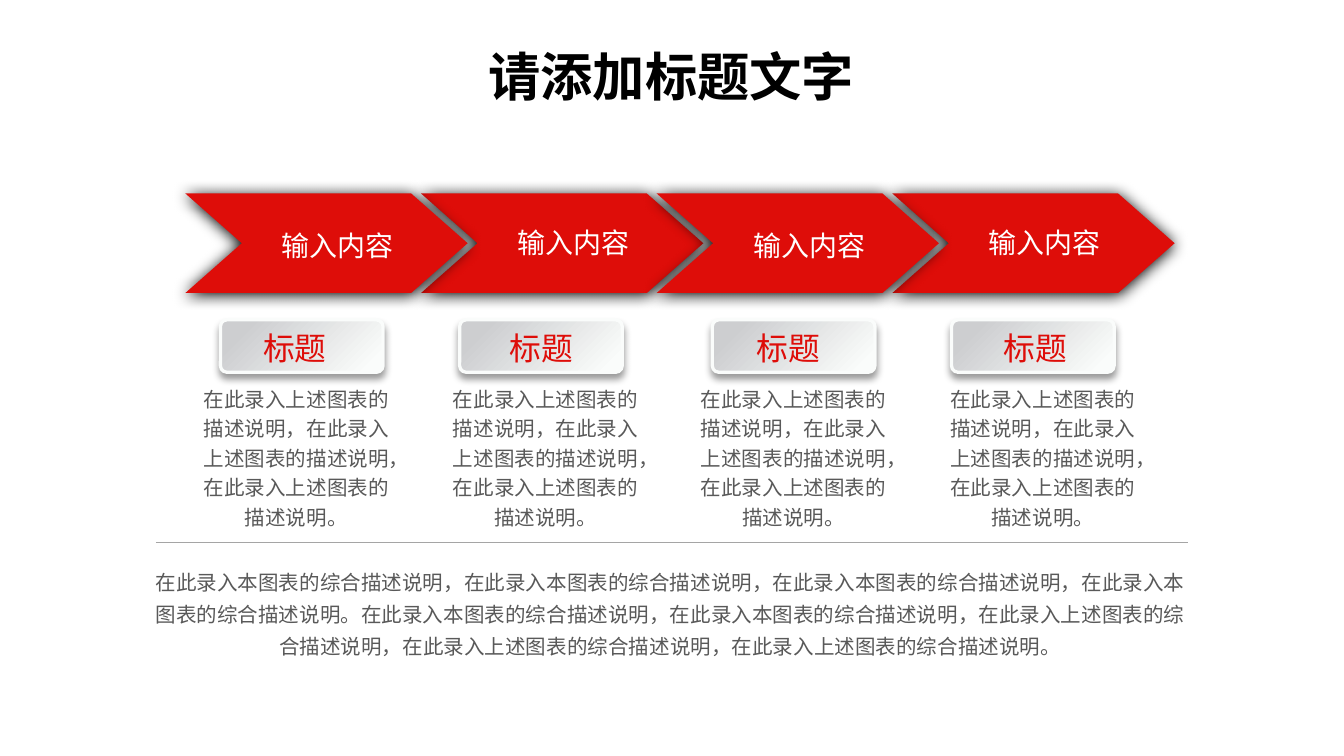
from lxml import etree
from pptx import Presentation
from pptx.dml.color import RGBColor
from pptx.enum import shapes, text
from pptx.oxml import ns
from pptx.util import Inches, Pt

RED = RGBColor(0xDE, 0x0D, 0x09)
WHITE = RGBColor(0xFF, 0xFF, 0xFF)
BLACK = RGBColor(0, 0, 0)
GREY_TEXT = RGBColor(0x59, 0x59, 0x59)
RULE_GREY = RGBColor(0xA5, 0xA5, 0xA5)
SILVER = RGBColor(0xCD, 0xCE, 0xD0)
PEARL = RGBColor(0xFA, 0xFC, 0xFB)

BODY_FONT = "Arial"
TITLE_FONT = "Noto Sans CJK SC"
TIGHT = (0.07, 0.04)
LOOSE = (0.1, 0.05)

ARROW_LEFT, ARROW_TOP = 1.38, 1.44
ARROW_STEP = (6.64 - ARROW_LEFT) / 3
ARROW_WIDTH, ARROW_HEIGHT, ARROW_NOTCH = 2.1, 0.74, 0.42
HEADING_LEFT = 1.88
HEADING_STEP = (7.39 - HEADING_LEFT) / 3

# Per step: label left, top, width, height and line spacing
LABELS = [
    (1.6, 1.61, 1.83, 0.38, 1.2),
    (3.38, 1.63, 1.77, 0.35, 1.0),
    (5.15, 1.61, 1.75, 0.38, 1.2),
    (6.89, 1.63, 1.77, 0.35, 1.0),
]
BADGE_LEFTS = [1.64, 3.42, 5.3, 7.08]
# Per step: description left and width
DESCRIPTIONS = [(1.42, 1.57), (3.29, 1.54), (5.13, 1.55), (6.99, 1.54)]
DRAW_ORDER = [1, 0, 3, 2]

DESCRIPTION = "，".join(["在此录入上述图表的描述说明"] * 3) + "。"
SUMMARY = ("，".join(["在此录入本图表的综合描述说明"] * 4) + "。"
           + "，".join(["在此录入本图表的综合描述说明"] * 2
                      + ["在此录入上述图表的综合描述说明"] * 3) + "。")


def add_shadow(shape, alpha, blur, distance):
    """Give a shape a black shadow that falls straight down."""
    shape.shadow.inherit = False
    effects = shape._element.spPr.find(ns.qn("a:effectLst"))
    shadow = etree.SubElement(
        effects, ns.qn("a:outerShdw"), blurRad=str(Pt(blur)),
        dist=str(Pt(distance)), dir="5400000", algn="t", rotWithShape="0")
    color = etree.SubElement(shadow, ns.qn("a:srgbClr"), val="000000")
    etree.SubElement(color, ns.qn("a:alpha"), val=str(alpha * 1000))


def write(shape, words, size, color, font=BODY_FONT, bold=False, spacing=1.0,
          margins=TIGHT, anchor=text.MSO_ANCHOR.TOP, wrap=True):
    """Fill a shape with one centred paragraph."""
    frame = shape.text_frame
    frame.word_wrap = wrap
    frame.vertical_anchor = anchor
    frame.margin_left = frame.margin_right = Inches(margins[0])
    frame.margin_top = frame.margin_bottom = Inches(margins[1])
    frame.text = words
    para = frame.paragraphs[0]
    para.alignment = text.PP_ALIGN.CENTER
    para.line_spacing = spacing
    span = para.runs[0]
    span.font.size = Pt(size)
    span.font.bold = bold
    span.font.color.rgb = color
    span.font.name = font
    # East Asian glyphs take their own typeface
    etree.SubElement(span._r.rPr, ns.qn("a:ea"), typeface=font)


def add_text(parent, left, top, width, height, words, size, color, **style):
    box = parent.add_textbox(*map(Inches, (left, top, width, height)))
    write(box, words, size, color, **style)


def add_badge(page, left):
    badge = page.shapes.add_shape(
        shapes.MSO_SHAPE.ROUNDED_RECTANGLE,
        Inches(left), Inches(2.38), Inches(1.21), Inches(0.39))
    badge.adjustments[0] = 0.125
    badge.fill.gradient()
    badge.fill.gradient_angle = 315
    for stop, position, color in zip(
            badge.fill.gradient_stops, (0.15, 0.92), (SILVER, PEARL)):
        stop.position = position
        stop.color.rgb = color
    badge.line.color.rgb = PEARL
    badge.line.width = Pt(1.75)
    add_shadow(badge, alpha=40, blur=4, distance=3)


def add_arrow(page, index):
    """Group a notched arrow with its label."""
    group = page.shapes.add_group_shape().shapes
    left = ARROW_LEFT + index * ARROW_STEP
    right = left + ARROW_WIDTH
    middle, bottom = ARROW_TOP + ARROW_HEIGHT / 2, ARROW_TOP + ARROW_HEIGHT
    outline = [(right - ARROW_NOTCH, ARROW_TOP), (right, middle),
               (right - ARROW_NOTCH, bottom), (left, bottom),
               (left + ARROW_NOTCH, middle)]
    builder = group.build_freeform(Inches(left), Inches(ARROW_TOP))
    builder.add_line_segments([(Inches(x), Inches(y)) for x, y in outline])
    arrow = builder.convert_to_shape()
    arrow.fill.solid()
    arrow.fill.fore_color.rgb = RED
    arrow.line.fill.background()
    add_shadow(arrow, alpha=100, blur=8.5, distance=1)

    *place, spacing = LABELS[index]
    add_text(group, *place, "输入内容", 15, WHITE, spacing=spacing,
             margins=LOOSE, anchor=text.MSO_ANCHOR.MIDDLE)


def add_rule(page):
    rule = page.shapes.add_connector(
        shapes.MSO_CONNECTOR.STRAIGHT,
        Inches(1.16), Inches(4.04), Inches(8.84), Inches(4.04))
    rule.line.color.rgb = RULE_GREY
    rule.line.width = Pt(0.5)
    etree.SubElement(rule._element.spPr, ns.qn("a:effectLst"))


def add_title(page):
    title = page.shapes.title
    title.left, title.top = Inches(3.26), Inches(0.13)
    title.width, title.height = Inches(3.47), Inches(0.87)
    write(title, "请添加标题文字", 28, BLACK, font=TITLE_FONT, bold=True,
          anchor=text.MSO_ANCHOR.MIDDLE)


def main():
    deck = Presentation()
    # Widescreen, 16 to 9
    deck.slide_width = Inches(10)
    deck.slide_height = Inches(10) * 9 // 16
    page = deck.slides.add_slide(deck.slide_layouts[5])
    add_title(page)

    # Process arrows above their heading badges
    for left in BADGE_LEFTS:
        add_badge(page, left)
    for index in DRAW_ORDER:
        add_arrow(page, index)

    # Heading and description under each arrow
    for index, (left, width) in enumerate(DESCRIPTIONS):
        add_text(page.shapes, HEADING_LEFT + index * HEADING_STEP, 2.41,
                 0.63, 0.36, "标题", 17, RED, wrap=False)
        add_text(page.shapes, left, 2.8, width, 1.19, DESCRIPTION, 11,
                 GREY_TEXT, spacing=1.2)

    # Summary below the rule
    add_rule(page)
    add_text(page.shapes, 1.04, 4.15, 7.9, 0.8, SUMMARY, 11, GREY_TEXT,
             spacing=1.3)
    deck.save("out.pptx")


if __name__ == "__main__":
    main()
